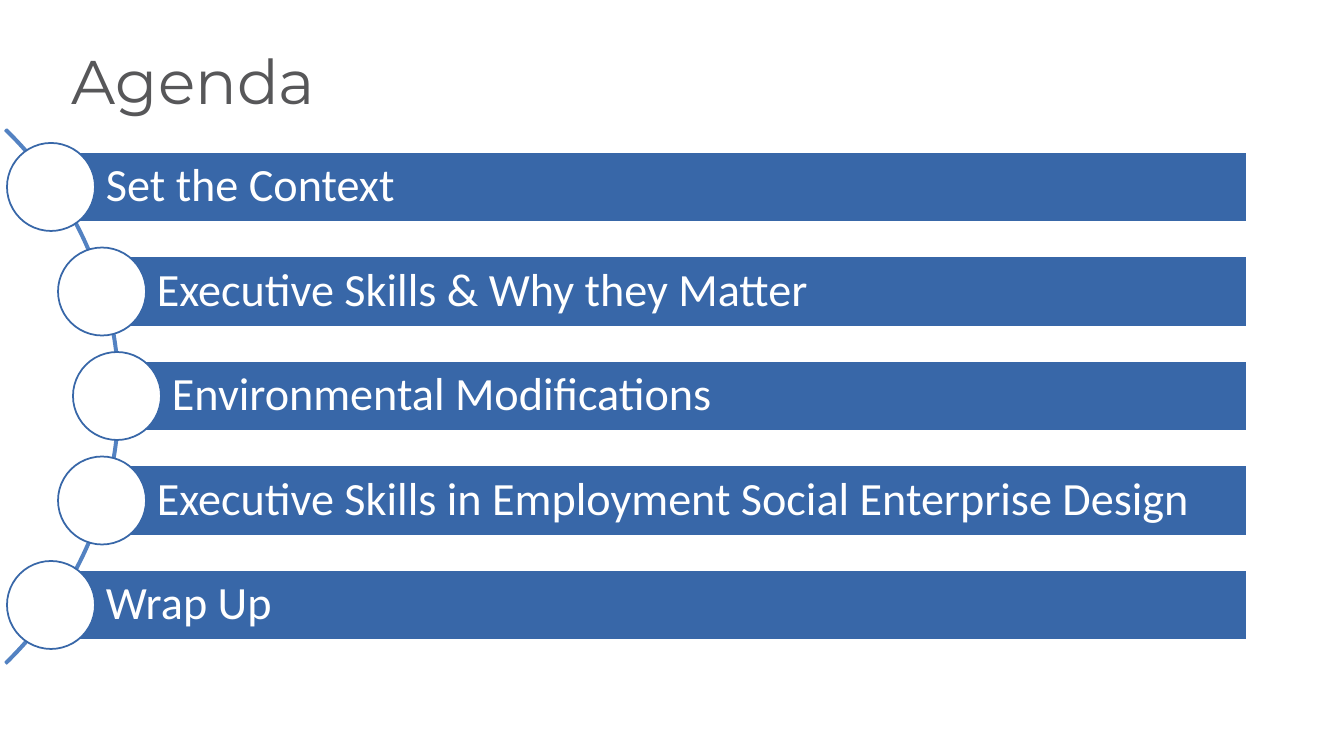
from dataclasses import dataclass

from pptx import Presentation
from pptx.dml.color import RGBColor
from pptx.enum.shapes import MSO_SHAPE as Shape
from pptx.enum.text import MSO_ANCHOR as Anchor, PP_ALIGN as Align
from pptx.util import Emu, Pt

# Content
TITLE = "Agenda"
TOPICS = [
    # wording, x of the circle's centre
    ("Set the Context", 51),
    ("Executive Skills & Why they Matter", 102),
    ("Environmental Modifications", 117),
    ("Executive Skills in Employment Social Enterprise Design", 102),
    ("Wrap Up", 51),
]


@dataclass(frozen=True)
class Theme:
    white: RGBColor = RGBColor(0xFF, 0xFF, 0xFF)
    bar: RGBColor = RGBColor(0x38, 0x67, 0xA8)
    arc: RGBColor = RGBColor(0x53, 0x82, 0xC2)
    title: RGBColor = RGBColor(0x57, 0x57, 0x59)
    title_font: str = "Montserrat"
    topic_font: str = "Calibri"
    title_size: int = 44
    topic_size: int = 33
    outline: float = 1.25


THEME = Theme()

# Layout in px
SLIDE_W, SLIDE_H = 1344, 756
EMU_PER_PX = 914400 / 100.8
TITLE_BOX = (62, 38, 547, 85)
ARC_BOX = (-641, 21, 761, 751)
ARC_ADJUSTMENTS = (189, 27, 0.003)
MIDDLE_Y = 396
BAR_RIGHT, BAR_H = 1247, 70
CIRCLE = 88
PITCH = 209 / 2


def px(length):
    return Emu(round(length * EMU_PER_PX))


def set_margins(frame, left, top, right, bottom):
    frame.margin_left, frame.margin_top = px(left), px(top)
    frame.margin_right, frame.margin_bottom = px(right), px(bottom)


def style_font(font, name, size, color):
    font.name, font.size, font.color.rgb = name, Pt(size), color


def add_part(slide, kind, box, fill, line):
    part = slide.shapes.add_shape(kind, *map(px, box))
    part.shadow.inherit = False
    part.fill.solid()
    part.fill.fore_color.rgb = fill
    part.line.color.rgb = line
    part.line.width = Pt(THEME.outline)
    return part


def add_title(slide):
    title = slide.shapes.title
    title.left, title.top, title.width, title.height = map(px, TITLE_BOX)
    title.fill.solid()
    title.fill.fore_color.rgb = THEME.white
    frame = title.text_frame
    frame.text = TITLE
    frame.vertical_anchor = Anchor.TOP
    set_margins(frame, 10, 5, 10, 5)
    heading = frame.paragraphs[0]
    heading.alignment = Align.LEFT
    style_font(heading.runs[0].font, THEME.title_font, THEME.title_size, THEME.title)


def add_topic(slide, wording, center_x, center_y):
    # The bar starts at the centre of its circle
    bar_box = (center_x, center_y - BAR_H / 2, BAR_RIGHT - center_x, BAR_H)
    bar = add_part(slide, Shape.RECTANGLE, bar_box, THEME.bar, THEME.white)
    frame = bar.text_frame
    frame.text = wording
    frame.word_wrap = True
    frame.vertical_anchor = Anchor.MIDDLE
    set_margins(frame, 55, 9, 9, 9)
    topic = frame.paragraphs[0]
    topic.alignment = Align.LEFT
    topic.line_spacing = 0.9
    style_font(topic.runs[0].font, THEME.topic_font, THEME.topic_size, THEME.white)

    circle_box = (center_x - CIRCLE / 2, center_y - CIRCLE / 2, CIRCLE, CIRCLE)
    add_part(slide, Shape.OVAL, circle_box, THEME.white, THEME.bar)


def main():
    deck = Presentation()
    deck.slide_width, deck.slide_height = px(SLIDE_W), px(SLIDE_H)
    slide = deck.slides.add_slide(deck.slide_layouts[5])
    add_title(slide)

    # Arc behind the circles
    arc = add_part(slide, Shape.BLOCK_ARC, ARC_BOX, THEME.arc, THEME.arc)
    for index, value in enumerate(ARC_ADJUSTMENTS):
        arc.adjustments[index] = value

    # Topics, spread evenly about the middle
    first_y = MIDDLE_Y - PITCH * (len(TOPICS) - 1) / 2
    for row, (wording, center_x) in enumerate(TOPICS):
        add_topic(slide, wording, center_x, first_y + row * PITCH)

    deck.save("out.pptx")


if __name__ == "__main__":
    main()
